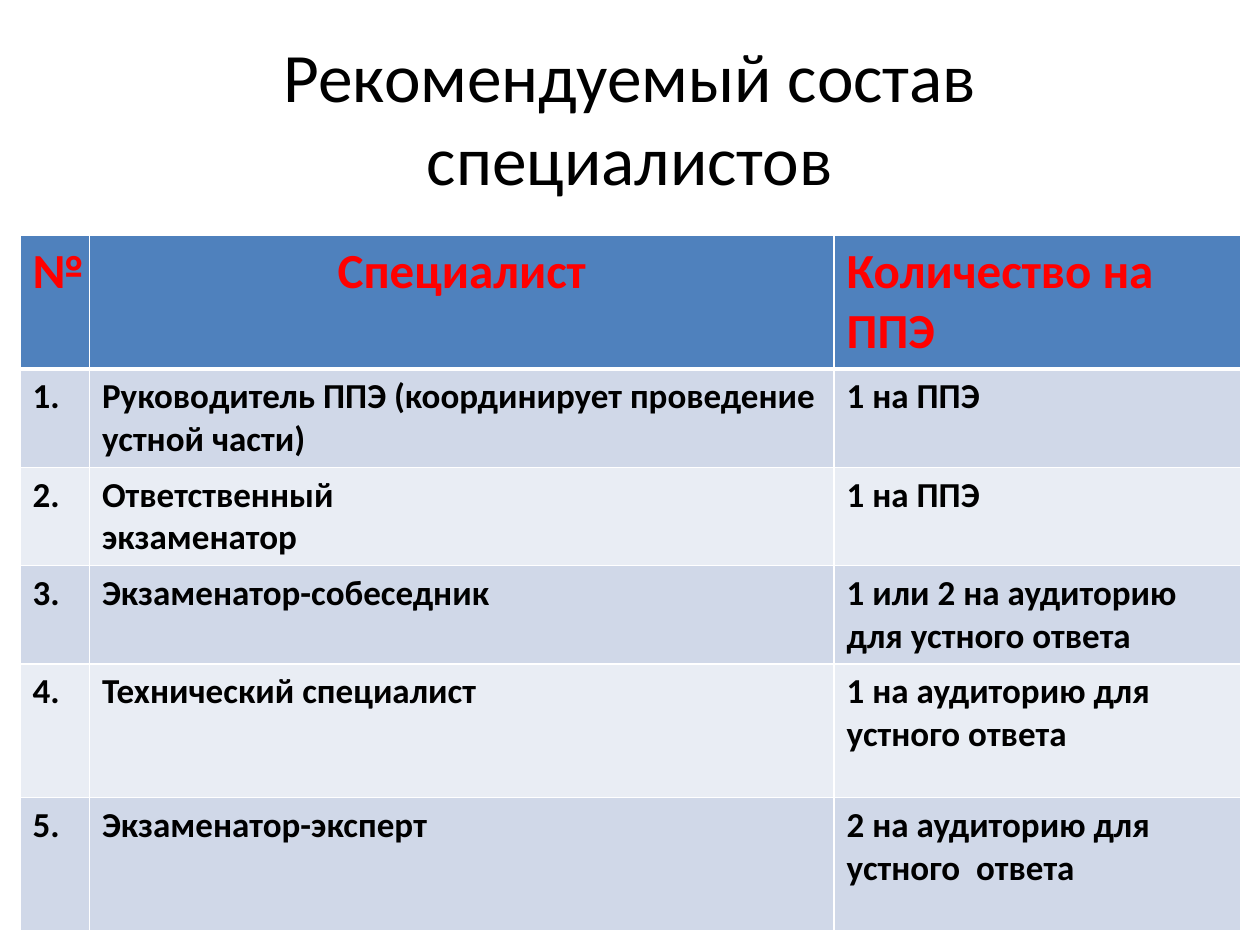
from lxml import etree
from pptx import Presentation
from pptx.dml.color import RGBColor
from pptx.enum.text import MSO_ANCHOR, PP_ALIGN
from pptx.oxml.ns import qn
from pptx.util import Inches, Pt

LEFT, CENTER = PP_ALIGN.LEFT, PP_ALIGN.CENTER
MIDDLE = MSO_ANCHOR.MIDDLE

BLACK = RGBColor(0x00, 0x00, 0x00)
WHITE = RGBColor(0xFF, 0xFF, 0xFF)
RED = RGBColor(0xFF, 0x00, 0x00)
BLUE = RGBColor(0x4F, 0x81, 0xBD)
BANDS = (RGBColor(0xD0, 0xD8, 0xE8), RGBColor(0xE9, 0xED, 0xF4))

COLS = (0.55, 5.91, 3.23)
ROWS = (1.06, 0.78, 0.78, 0.78, 1.06, 1.06)
HEAD = ("№", "Специалист", "Количество на ППЭ")
STAFF = (
    ("Руководитель ППЭ (координирует проведение устной части)", "1 на ППЭ"),
    ("Ответственный\nэкзаменатор", "1 на ППЭ"),
    ("Экзаменатор-собеседник", "1 или 2 на аудиторию для устного ответа"),
    ("Технический специалист", "1 на аудиторию для устного ответа"),
    ("Экзаменатор-эксперт", "2 на аудиторию для устного  ответа"),
)


class Deck:
    def __init__(self, font):
        self.font = font
        self.prs = Presentation()
        self.prs.slide_width = Inches(10)
        self.prs.slide_height = Inches(7.5)
        self.slide = self.prs.slides.add_slide(self.prs.slide_layouts[6])

    def text(self, frame, words, size, color, bold=False, align=LEFT):
        """Put each line of the words in a paragraph of its own."""
        frame.word_wrap = True
        for i, line in enumerate(words.split("\n")):
            para = frame.add_paragraph() if i else frame.paragraphs[0]
            para.alignment = align
            run = para.add_run()
            run.text = line
            run.font.name = self.font
            run.font.size = Pt(size)
            run.font.bold = bold
            run.font.color.rgb = color

    def title(self, words, x, y, w, h):
        box = self.slide.shapes.add_textbox(
            Inches(x), Inches(y), Inches(w), Inches(h))
        frame = box.text_frame
        frame.vertical_anchor = MIDDLE
        frame.margin_left = frame.margin_right = Inches(0.2)
        self.text(frame, words, 39.6, BLACK, align=CENTER)

    def edge(self, cell, side, width):
        props = cell._tc.get_or_add_tcPr()
        line = etree.SubElement(props, qn("a:ln" + side), w=str(Pt(width)))
        fill = etree.SubElement(line, qn("a:solidFill"))
        etree.SubElement(fill, qn("a:srgbClr"), val=str(WHITE))

    def cell(self, cell, words, fill, size, color, align, base):
        for side in "LRT":
            self.edge(cell, side, 1)
        self.edge(cell, "B", base)
        cell.fill.solid()
        cell.fill.fore_color.rgb = fill
        self.text(cell.text_frame, words, size, color, True, align)

    def table(self, x, y):
        grid = self.slide.shapes.add_table(
            len(ROWS), len(COLS), Inches(x), Inches(y),
            Inches(sum(COLS)), Inches(sum(ROWS))).table
        for col, width in zip(grid.columns, COLS):
            col.width = Inches(width)
        for row, height in zip(grid.rows, ROWS):
            row.height = Inches(height)
        for c, words in enumerate(HEAD):
            align = CENTER if c < 2 else LEFT
            self.cell(grid.cell(0, c), words, BLUE, 28, RED, align, 3)
        for r, (role, count) in enumerate(STAFF, 1):
            fill = BANDS[(r - 1) % 2]
            for c, words in enumerate((f"{r}.", role, count)):
                self.cell(grid.cell(r, c), words, fill, 20, BLACK, LEFT, 1)


def main():
    deck = Deck("Calibri")
    deck.title("Рекомендуемый состав специалистов", 0.5, 0.3, 9, 1.25)
    deck.table(0.16, 1.87)
    deck.prs.save("out.pptx")


if __name__ == "__main__":
    main()
